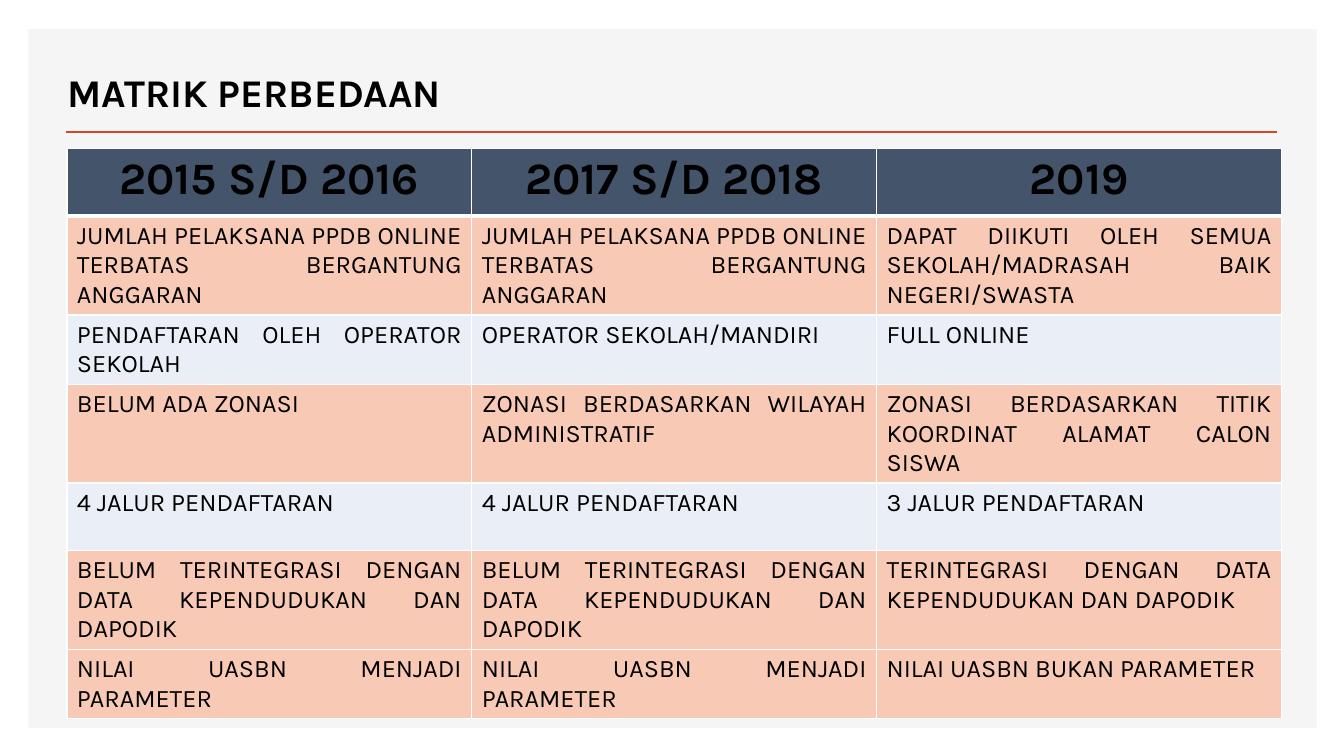
from dataclasses import dataclass

from lxml.etree import SubElement
from pptx import Presentation
from pptx.dml.color import RGBColor
from pptx.enum.shapes import MSO_CONNECTOR as Connector, MSO_SHAPE as Shape
from pptx.enum.text import MSO_ANCHOR as Anchor, PP_ALIGN as Align
from pptx.oxml.ns import qn
from pptx.slide import Slide
from pptx.table import _Cell as Cell
from pptx.util import Pt


@dataclass(frozen=True)
class Theme:
    font: str = "Karla"
    text: str = "000000"
    panel: str = "F5F5F5"
    accent: str = "D24726"
    header: str = "44546A"
    warm: str = "F8CAB6"
    cool: str = "EAEFF7"
    border: str = "FFFFFF"
    title_size: float = 28
    header_size: float = 32
    body_size: float = 18


@dataclass(frozen=True)
class MatrixRow:
    texts: tuple[str, str, str]
    fill: str
    header: bool = False


THEME = Theme()
MATRIX = [
    MatrixRow(("2015 S/D 2016", "2017 S/D 2018", "2019"), THEME.header, header=True),
    MatrixRow(("JUMLAH PELAKSANA PPDB ONLINE TERBATAS BERGANTUNG ANGGARAN",
               "JUMLAH PELAKSANA PPDB ONLINE TERBATAS BERGANTUNG ANGGARAN",
               "DAPAT DIIKUTI OLEH SEMUA SEKOLAH/MADRASAH BAIK NEGERI/SWASTA"), THEME.warm),
    MatrixRow(("PENDAFTARAN OLEH OPERATOR SEKOLAH",
               "OPERATOR SEKOLAH/MANDIRI",
               "FULL ONLINE"), THEME.cool),
    MatrixRow(("BELUM ADA ZONASI",
               "ZONASI BERDASARKAN WILAYAH ADMINISTRATIF",
               "ZONASI BERDASARKAN TITIK KOORDINAT ALAMAT CALON SISWA"), THEME.warm),
    MatrixRow(("4 JALUR PENDAFTARAN",
               "4 JALUR PENDAFTARAN",
               "3 JALUR PENDAFTARAN"), THEME.cool),
    MatrixRow(("BELUM TERINTEGRASI DENGAN DATA KEPENDUDUKAN DAN DAPODIK",
               "BELUM TERINTEGRASI DENGAN DATA KEPENDUDUKAN DAN DAPODIK",
               "TERINTEGRASI DENGAN DATA KEPENDUDUKAN DAN DAPODIK"), THEME.warm),
    MatrixRow(("NILAI UASBN MENJADI PARAMETER",
               "NILAI UASBN MENJADI PARAMETER",
               "NILAI UASBN BUKAN PARAMETER"), THEME.warm),
]
COLUMN_WIDTH = 289.2
ROW_HEIGHT = 48.2


def write(holder, text: str, size: float, bold: bool, align: Align) -> None:
    """Fill a cell or shape with one formatted paragraph."""
    holder.text_frame.text = text
    para = holder.text_frame.paragraphs[0]
    para.alignment = align
    font = para.runs[0].font
    font.name, font.size, font.bold = THEME.font, Pt(size), bold
    font.color.rgb = RGBColor.from_string(THEME.text)


def set_borders(cell: Cell, top: float, bottom: float) -> None:
    """Draw the four cell borders; call before the cell is filled."""
    properties = cell._tc.get_or_add_tcPr()
    for side, width in (("L", 1), ("R", 1), ("T", top), ("B", bottom)):
        line = SubElement(properties, qn(f"a:ln{side}"), w=str(Pt(width)))
        SubElement(SubElement(line, qn("a:solidFill")), qn("a:srgbClr"), val=THEME.border)


def add_frame(page: Slide) -> None:
    # Panel, placed behind the title
    panel = page.shapes.add_shape(Shape.RECTANGLE, Pt(20.2), Pt(20.9), Pt(920.2), Pt(499))
    panel.shadow.inherit = False
    panel.fill.solid()
    panel.fill.fore_color.rgb = RGBColor.from_string(THEME.panel)
    panel.line.fill.background()
    page.shapes.title.element.addprevious(panel.element)

    # Rule under the title
    rule = page.shapes.add_connector(Connector.STRAIGHT, Pt(47.5), Pt(94.3), Pt(912.2), Pt(94.3))
    rule.line.color.rgb = RGBColor.from_string(THEME.accent)
    rule.line.width = Pt(2)
    SubElement(rule.element.spPr, qn("a:effectLst"))


def add_title(page: Slide, text: str) -> None:
    title = page.shapes.title
    title.left, title.top, title.width, title.height = Pt(41), Pt(35.3), Pt(541.4), Pt(50.4)
    write(title, text, THEME.title_size, True, Align.LEFT)
    title.text_frame.vertical_anchor = Anchor.BOTTOM


def add_matrix(page: Slide, rows: list[MatrixRow]) -> None:
    columns = len(rows[0].texts)
    table = page.shapes.add_table(len(rows), columns, Pt(47.8), Pt(106.2),
                                  Pt(columns * COLUMN_WIDTH), Pt(len(rows) * ROW_HEIGHT)).table
    for column in table.columns:
        column.width = Pt(COLUMN_WIDTH)
    for index, row in enumerate(rows):
        table.rows[index].height = Pt(ROW_HEIGHT)
        size = THEME.header_size if row.header else THEME.body_size
        align = Align.CENTER if row.header else Align.JUSTIFY
        for cell, text in zip(table.rows[index].cells, row.texts):
            set_borders(cell, top=3 if index == 1 else 1, bottom=3 if row.header else 1)
            cell.fill.solid()
            cell.fill.fore_color.rgb = RGBColor.from_string(row.fill)
            write(cell, text, size, row.header, align)


def main() -> None:
    deck = Presentation()
    deck.slide_width, deck.slide_height = Pt(960), Pt(540)
    page = deck.slides.add_slide(deck.slide_layouts.get_by_name("Title Only"))
    add_frame(page)
    add_title(page, "MATRIK PERBEDAAN")
    add_matrix(page, MATRIX)
    deck.save("out.pptx")


if __name__ == "__main__":
    main()
